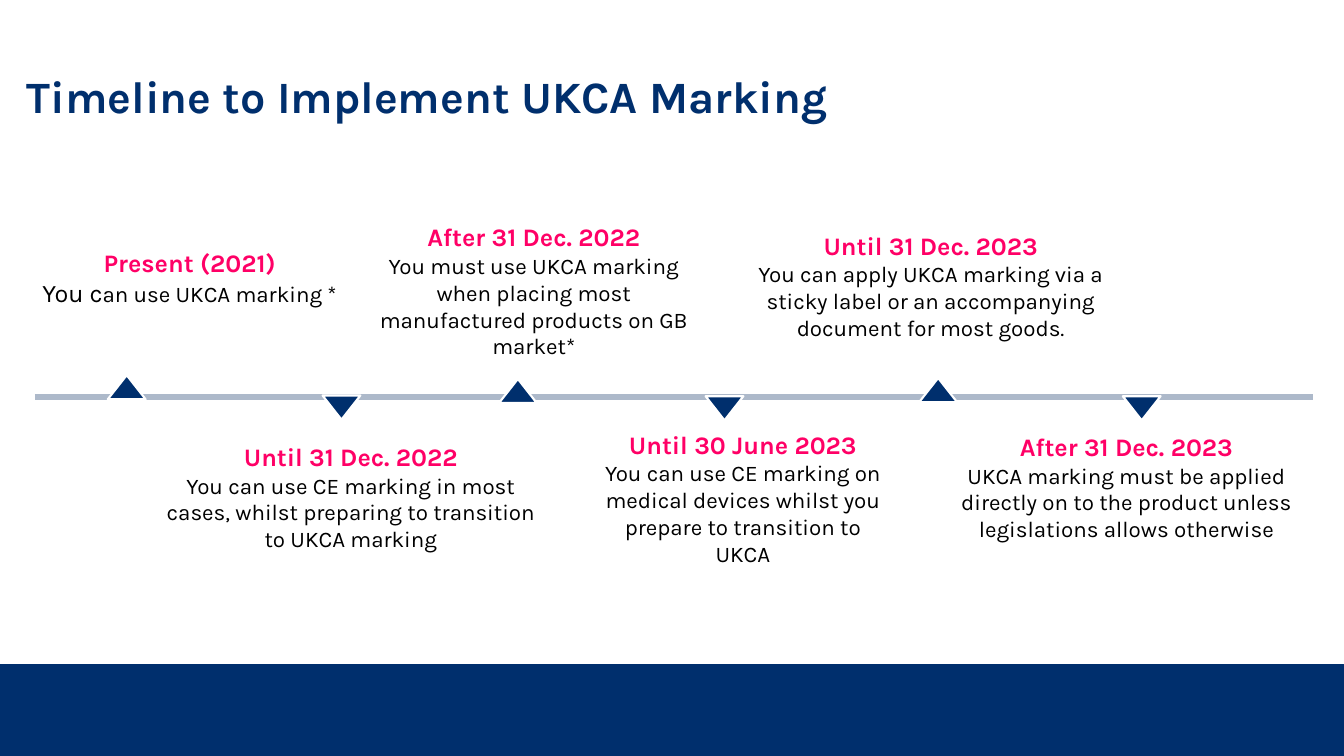
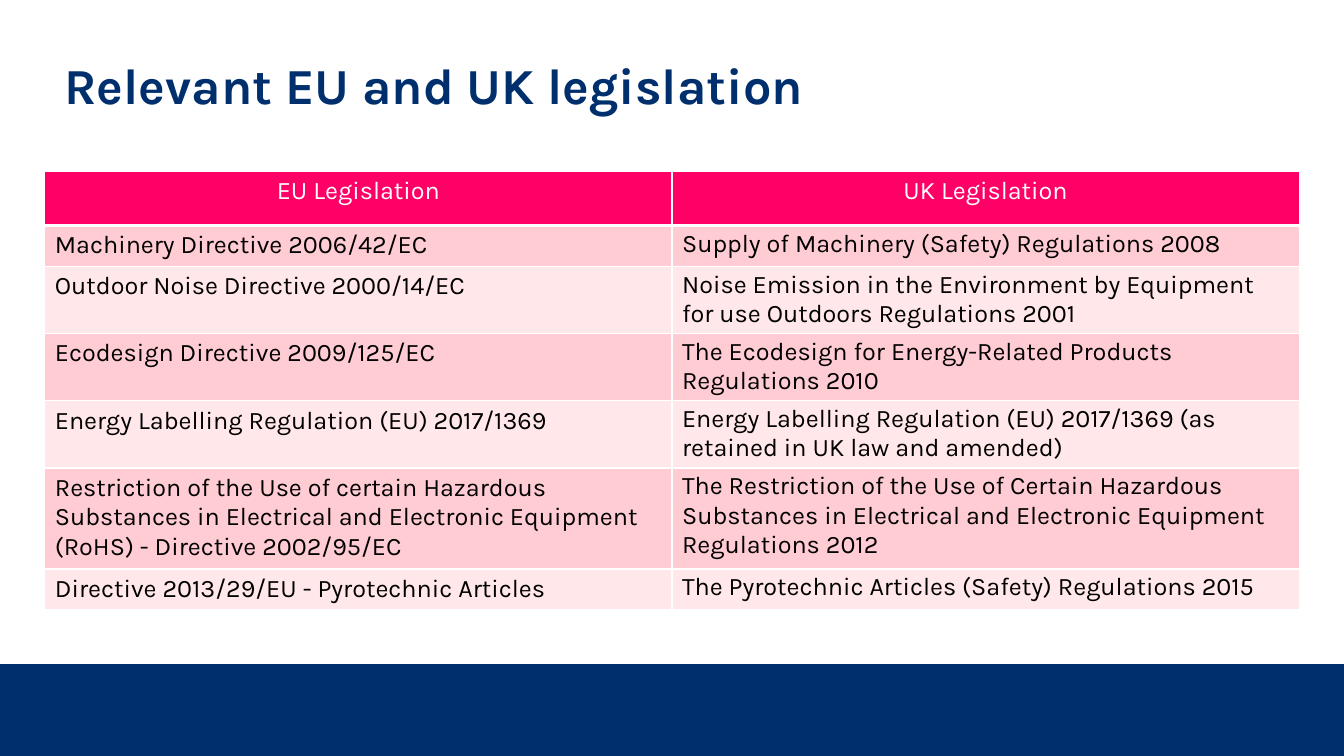
from dataclasses import dataclass

from lxml.etree import SubElement
from pptx import Presentation
from pptx.dml.color import RGBColor
from pptx.enum.shapes import MSO_CONNECTOR, MSO_SHAPE
from pptx.enum.text import MSO_ANCHOR, PP_ALIGN
from pptx.oxml.ns import qn
from pptx.util import Pt


@dataclass(frozen=True)
class Theme:
    """Colours, font and type sizes shared by the slides."""

    font: str = "Karla"
    navy: str = "002F6D"
    pink: str = "FF0066"
    grey: str = "ADB9CA"
    black: str = "000000"
    white: str = "FFFFFF"
    bands: tuple = ("FFCCD3", "FFE7EA")
    timeline_title: int = 32
    table_title: int = 36
    heading: int = 18
    body: int = 16


@dataclass(frozen=True)
class Box:
    """A rectangle in points."""

    left: float
    top: float
    width: float
    height: float

    def inside(self, left, top, width, height):
        """Return a box placed relative to this one."""
        return Box(self.left + left, self.top + top, width, height)

    def lengths(self):
        """Return left, top, width and height as lengths."""
        return Pt(self.left), Pt(self.top), Pt(self.width), Pt(self.height)


@dataclass(frozen=True)
class Milestone:
    """A dated note and its marker, relative to the timeline."""

    heading: str
    body: tuple
    note: tuple
    marker: tuple
    points_up: bool


THEME = Theme()
PAGE = Box(0, 0, 960, 540)
MARKER_SIZE = (27, 17.2)
BAND_HEIGHT = 65.5

MILESTONES = (
    Milestone("Present (2021)",
              (("You c", THEME.heading), ("an use UKCA marking *", THEME.body)),
              (0, 19, 247, 51), (65, 114), True),
    Milestone("Until 31 Dec. 2022",
              (("You can use CE marking in most cases, whilst preparing "
                "to transition to UKCA marking", THEME.body),),
              (99.6, 157.8, 278, 87), (218.4, 128.5), False),
    Milestone("After 31 Dec. 2022",
              (("You must use UKCA marking when placing most manufactured "
                "products on GB market*", THEME.body),),
              (245.8, 0.8, 247, 107), (344.4, 116.7), True),
    Milestone("Until 30 June 2023",
              (("You can use CE marking on medical devices whilst you "
                "prepare to transition to UKCA", THEME.body),),
              (408.5, 149, 220.3, 107), (492, 129), False),
    Milestone("Until 31 Dec. 2023",
              (("You can apply UKCA marking via a sticky label or an "
                "accompanying document for most goods.", THEME.body),),
              (502.8, 6.6, 300, 87), (644.6, 116), True),
    Milestone("After 31 Dec. 2023",
              (("UKCA marking must be applied directly on to the product "
                "unless legislations allows otherwise", THEME.body),),
              (658.3, 150.6, 268.6, 87), (790, 129), False),
)

HEADERS = ("EU Legislation", "UK Legislation")
LEGISLATION = (
    ("Machinery Directive 2006/42/EC",
     "Supply of Machinery (Safety) Regulations 2008"),
    ("Outdoor Noise Directive 2000/14/EC",
     "Noise Emission in the Environment by Equipment for use Outdoors "
     "Regulations 2001"),
    ("Ecodesign Directive 2009/125/EC",
     "The Ecodesign for Energy-Related Products Regulations 2010"),
    ("Energy Labelling Regulation (EU) 2017/1369",
     "Energy Labelling Regulation (EU) 2017/1369 (as retained in UK law "
     "and amended)"),
    ("Restriction of the Use of certain Hazardous Substances in Electrical "
     "and Electronic Equipment (RoHS) - Directive 2002/95/EC",
     "The Restriction of the Use of Certain Hazardous Substances in "
     "Electrical and Electronic Equipment Regulations 2012"),
    ("Directive 2013/29/EU - Pyrotechnic Articles",
     "The Pyrotechnic Articles (Safety) Regulations 2015"),
)
ROW_HEIGHTS = (38.6, 29.3, 47.2, 47.2, 47.2, 70, 29.3)


def colour(value):
    """Return a colour from its hexadecimal name."""
    return RGBColor.from_string(value)


def add_span(para, text, size, shade, bold=False):
    """Add one styled run to a paragraph."""
    span = para.add_run()
    span.text = text
    span.font.name = THEME.font
    span.font.size = Pt(size)
    span.font.bold = bold
    span.font.color.rgb = colour(shade)


def add_text_frame(page, box, anchor=MSO_ANCHOR.TOP):
    """Add a wrapping text box and return its frame."""
    frame = page.shapes.add_textbox(*box.lengths()).text_frame
    frame.word_wrap = True
    frame.vertical_anchor = anchor
    return frame


def add_solid(page, kind, box, fill, line, line_width):
    """Add a filled and outlined shape without shadow."""
    shape = page.shapes.add_shape(kind, *box.lengths())
    shape.shadow.inherit = False
    shape.fill.solid()
    shape.fill.fore_color.rgb = colour(fill)
    shape.line.color.rgb = colour(line)
    shape.line.width = Pt(line_width)
    return shape


def add_page(deck, title, box, size):
    """Add a page with its bottom band and title."""
    page = deck.slides.add_slide(deck.slide_layouts[6])
    band = PAGE.inside(0, PAGE.height - BAND_HEIGHT, PAGE.width, BAND_HEIGHT)
    add_solid(page, MSO_SHAPE.RECTANGLE, band, THEME.navy, THEME.navy, 0.75)
    para = add_text_frame(page, box, MSO_ANCHOR.MIDDLE).paragraphs[0]
    para.line_spacing = 0.9
    add_span(para, title, size, THEME.navy, bold=True)
    return page


def add_axis(page, box):
    """Draw the horizontal line of the timeline."""
    left, top, width, _ = box.lengths()
    axis = page.shapes.add_connector(
        MSO_CONNECTOR.STRAIGHT, left, top, left + width, top)
    axis.line.color.rgb = colour(THEME.grey)
    axis.line.width = Pt(4.5)
    SubElement(axis._element.spPr, qn("a:effectLst"))


def add_milestone(page, box, milestone):
    """Place the note and marker of one milestone."""
    frame = add_text_frame(page, box.inside(*milestone.note))
    heading = frame.paragraphs[0]
    body = frame.add_paragraph()
    heading.alignment = body.alignment = PP_ALIGN.CENTER
    add_span(heading, milestone.heading, THEME.heading, THEME.pink, bold=True)
    for text, size in milestone.body:
        add_span(body, text, size, THEME.black)
    marker = add_solid(page, MSO_SHAPE.FLOWCHART_MERGE,
                       box.inside(*milestone.marker, *MARKER_SIZE),
                       THEME.navy, THEME.white, 1.5)
    marker.rotation = 180 if milestone.points_up else 0


def add_timeline(page, box):
    """Place the axis and all milestones in a box."""
    add_axis(page, box.inside(13, 129.7, box.width - 13, 0))
    for milestone in MILESTONES:
        add_milestone(page, box, milestone)


def add_borders(cell, bottom_width):
    """Give a cell white borders."""
    properties = cell._tc.get_or_add_tcPr()
    for side in "LRTB":
        width = bottom_width if side == "B" else 1
        line = SubElement(properties, qn(f"a:ln{side}"), w=str(Pt(width)))
        fill = SubElement(line, qn("a:solidFill"))
        SubElement(fill, qn("a:srgbClr"), val=THEME.white)


def fill_cell(cell, text, is_header, fill):
    """Write and style one table cell."""
    add_borders(cell, 3 if is_header else 1)
    cell.fill.solid()
    cell.fill.fore_color.rgb = colour(fill)
    para = cell.text_frame.paragraphs[0]
    para.alignment = PP_ALIGN.CENTER if is_header else PP_ALIGN.LEFT
    add_span(para, text, THEME.heading,
             THEME.white if is_header else THEME.black)


def add_legislation_table(page, box):
    """Place the table of matching laws in a box."""
    rows = (HEADERS, *LEGISLATION)
    table = page.shapes.add_table(
        len(rows), len(HEADERS), *box.lengths()).table
    for column in table.columns:
        column.width = Pt(box.width / len(HEADERS))
    for row_number, (texts, height) in enumerate(zip(rows, ROW_HEIGHTS)):
        table.rows[row_number].height = Pt(height)
        is_header = row_number == 0
        fill = THEME.pink if is_header else THEME.bands[(row_number - 1) % 2]
        for column_number, text in enumerate(texts):
            cell = table.cell(row_number, column_number)
            if column_number == 1 and not is_header:
                cell.margin_top = cell.margin_bottom = Pt(2.4)
            fill_cell(cell, text, is_header, fill)


def add_timeline_page(deck):
    """Build the timeline slide."""
    page = add_page(deck, "Timeline to Implement UKCA Marking",
                    Box(12, 19, 804, 103), THEME.timeline_title)
    add_timeline(page, Box(12, 154, 926, 260))


def add_legislation_page(deck):
    """Build the legislation slide."""
    page = add_page(deck, "Relevant EU and UK legislation",
                    Box(39, 37.5, 716, 51), THEME.table_title)
    add_legislation_table(page, Box(32, 122.5, 896, sum(ROW_HEIGHTS)))


def main():
    """Build and save the deck."""
    deck = Presentation()
    deck.slide_width = Pt(PAGE.width)
    deck.slide_height = Pt(PAGE.height)
    add_timeline_page(deck)
    add_legislation_page(deck)
    deck.save("out.pptx")


if __name__ == "__main__":
    main()
